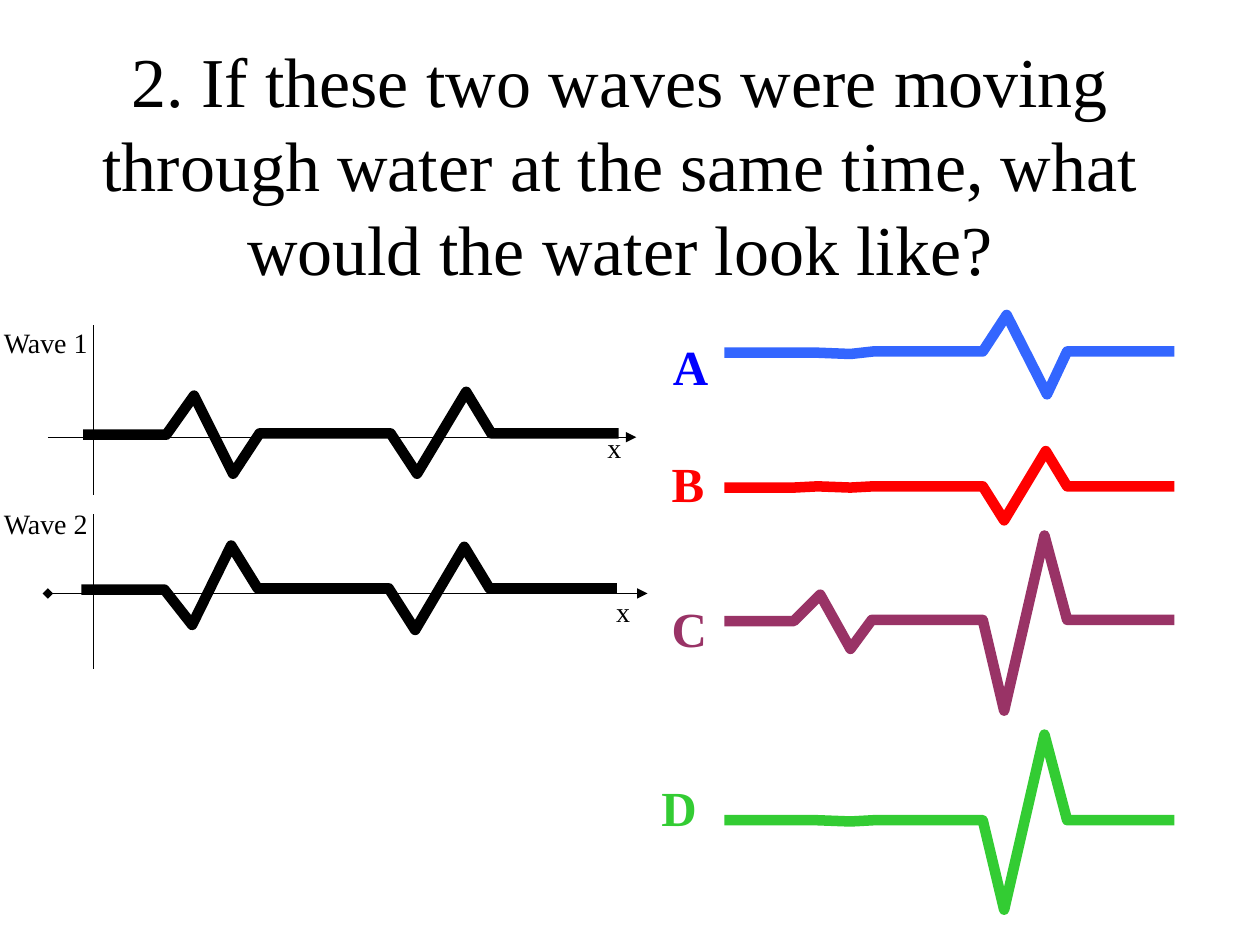
from dataclasses import dataclass

from lxml import etree
from pptx import Presentation
from pptx.dml.color import RGBColor
from pptx.enum.shapes import MSO_CONNECTOR
from pptx.enum.text import MSO_ANCHOR, MSO_AUTO_SIZE, PP_ALIGN
from pptx.oxml.ns import qn
from pptx.util import Inches, Pt

STRAIGHT = MSO_CONNECTOR.STRAIGHT
MIDDLE = MSO_ANCHOR.MIDDLE
NO_AUTOFIT = MSO_AUTO_SIZE.NONE
CENTER = PP_ALIGN.CENTER

# Grid of 100 columns by 75 rows
SLIDE_WIDTH, SLIDE_HEIGHT = Inches(10), Inches(7.5)
COLUMN, ROW = SLIDE_WIDTH / 100, SLIDE_HEIGHT / 75
FONT = "Times New Roman"
COLORS = {
    "black": "000000",
    "label blue": "0000FF",
    "blue": "3366FF",
    "red": "FF0000",
    "purple": "993366",
    "green": "33CC33",
}


@dataclass(frozen=True)
class Wave:
    color: str
    columns: tuple[float, ...]
    rows: tuple[float, ...]


@dataclass(frozen=True)
class Axis:
    start: tuple[float, float]
    end: tuple[float, float]
    head: str = ""
    tail: str = ""


@dataclass(frozen=True)
class Label:
    text: str
    column: float
    row: float
    width: float
    height: float
    size: int = 16
    color: str = "black"
    bold: bool = False


def answer_columns(first: float = 64.9, flat: float = 69.3,
                   second: float = 79.7, third: float = 82.9) -> tuple[float, ...]:
    """Columns of an answer wave, whose ends and flat parts are shared."""
    return (57.5, 63, first, 67.5, flat, 78, second, third, 84.7, 93.2)


def answer_label(text: str, column: float, row: float, color: str) -> Label:
    return Label(text, column, row, 3, 3, 28, color, True)


WAVE_1_COLUMNS = (6.6, 13.2, 15.4, 18.5, 20.6, 31, 33.1, 37, 39, 49.1)
WAVE_2_COLUMNS = tuple(column - 0.15 for column in WAVE_1_COLUMNS)

WAVES = (
    Wave("red", answer_columns(third=83),
         (38.7, 38.7, 38.6, 38.7, 38.6, 38.6, 41.3, 35.8, 38.6, 38.6)),
    Wave("blue", answer_columns(second=79.9, third=83.1),
         (28, 28, 28, 28.1, 27.9, 27.9, 25, 31.3, 27.9, 27.9)),
    Wave("green", answer_columns(),
         (65.1, 65.1, 65.1, 65.2, 65.1, 65.1, 72.2, 58.3, 65.1, 65.1)),
    Wave("purple", answer_columns(first=65.1, flat=69.2),
         (49.3, 49.3, 47.2, 51.5, 49.2, 49.2, 56.4, 42.5, 49.2, 49.2)),
    Wave("black", WAVE_1_COLUMNS,
         (34.5, 34.5, 31.4, 37.6, 34.4, 34.4, 37.6, 31.1, 34.4, 34.4)),
    Wave("black", WAVE_2_COLUMNS,
         (46.8, 46.8, 49.6, 43.3, 46.7, 46.7, 50, 43.4, 46.7, 46.7)),
)

AXES = (
    Axis((3.8, 47.1), (51.4, 47.1), "diamond", "triangle"),
    Axis((7.4, 40.8), (7.4, 53.1)),
    Axis((3.8, 34.7), (50.5, 34.7), tail="triangle"),
    Axis((7.4, 25.8), (7.4, 39.3)),
)

LABELS = (
    answer_label("A", 53.4, 26.7, "label blue"),
    answer_label("B", 53.3, 36, "red"),
    answer_label("C", 53.3, 47.5, "purple"),
    answer_label("D", 52.5, 61.7, "green"),
    Label("x", 48.2, 34.2, 3.5, 3.5),
    Label("x", 48.9, 47.2, 3.5, 3.5),
    Label("Wave 1", 0.3, 25.8, 7.1, 3.5),
    Label("Wave 2", 0.3, 40.2, 7.1, 3.5),
)


def across(columns: float) -> int:
    return round(columns * COLUMN)


def down(rows: float) -> int:
    return round(rows * ROW)


def rgb(name: str) -> RGBColor:
    return RGBColor.from_string(COLORS[name])


def write_title(page, text: str) -> None:
    title = page.shapes.title
    title.left, title.top = across(4.2), down(10)
    title.width, title.height = across(90), down(12.5)
    frame = title.text_frame
    frame.text = text
    frame.word_wrap = True
    frame.auto_size = NO_AUTOFIT
    frame.vertical_anchor = MIDDLE
    frame.margin_bottom = down(7)
    para = frame.paragraphs[0]
    para.alignment = CENTER
    para.line_spacing = Pt(48)
    para.font.name, para.font.size = FONT, Pt(40)
    para.font.color.rgb = rgb("black")


def draw_wave(page, wave: Wave) -> None:
    points = [(across(column), down(row))
              for column, row in zip(wave.columns, wave.rows)]
    builder = page.shapes.build_freeform(*points[0])
    builder.add_line_segments(points[1:], close=False)
    curve = builder.convert_to_shape()
    curve.shadow.inherit = False
    curve.fill.background()
    curve.line.color.rgb = rgb(wave.color)
    curve.line.width = Pt(6)
    etree.SubElement(curve.line._get_or_add_ln(), qn("a:round"))


def draw_axis(page, axis: Axis) -> None:
    line = page.shapes.add_connector(
        STRAIGHT, across(axis.start[0]), down(axis.start[1]),
        across(axis.end[0]), down(axis.end[1]))
    line.line.color.rgb = rgb("black")
    line.line.width = Pt(0.75)
    outline = line.line._get_or_add_ln()
    for tag, kind in (("a:headEnd", axis.head), ("a:tailEnd", axis.tail)):
        if kind:
            etree.SubElement(outline, qn(tag), type=kind)
    etree.SubElement(line._element.spPr, qn("a:effectLst"))


def write_label(page, label: Label) -> None:
    box = page.shapes.add_textbox(across(label.column), down(label.row),
                                  across(label.width), down(label.height))
    frame = box.text_frame
    frame.word_wrap = True
    frame.margin_left = frame.margin_right = 0
    frame.margin_top = frame.margin_bottom = 0
    para = frame.paragraphs[0]
    para.text = label.text
    para.font.name, para.font.size = FONT, Pt(label.size)
    para.font.bold = label.bold
    para.font.color.rgb = rgb(label.color)


def main() -> None:
    deck = Presentation()
    deck.slide_width, deck.slide_height = SLIDE_WIDTH, SLIDE_HEIGHT
    page = deck.slides.add_slide(deck.slide_layouts.get_by_name("Title Only"))

    # Question
    write_title(page, "2. If these two waves were moving through water "
                      "at the same time, what would the water look like?")
    # Given waves and possible answers
    for wave in WAVES:
        draw_wave(page, wave)
    # Axes of the given waves
    for axis in AXES:
        draw_axis(page, axis)
    # Names of waves, axes and answers
    for label in LABELS:
        write_label(page, label)

    deck.save("out.pptx")


if __name__ == "__main__":
    main()
